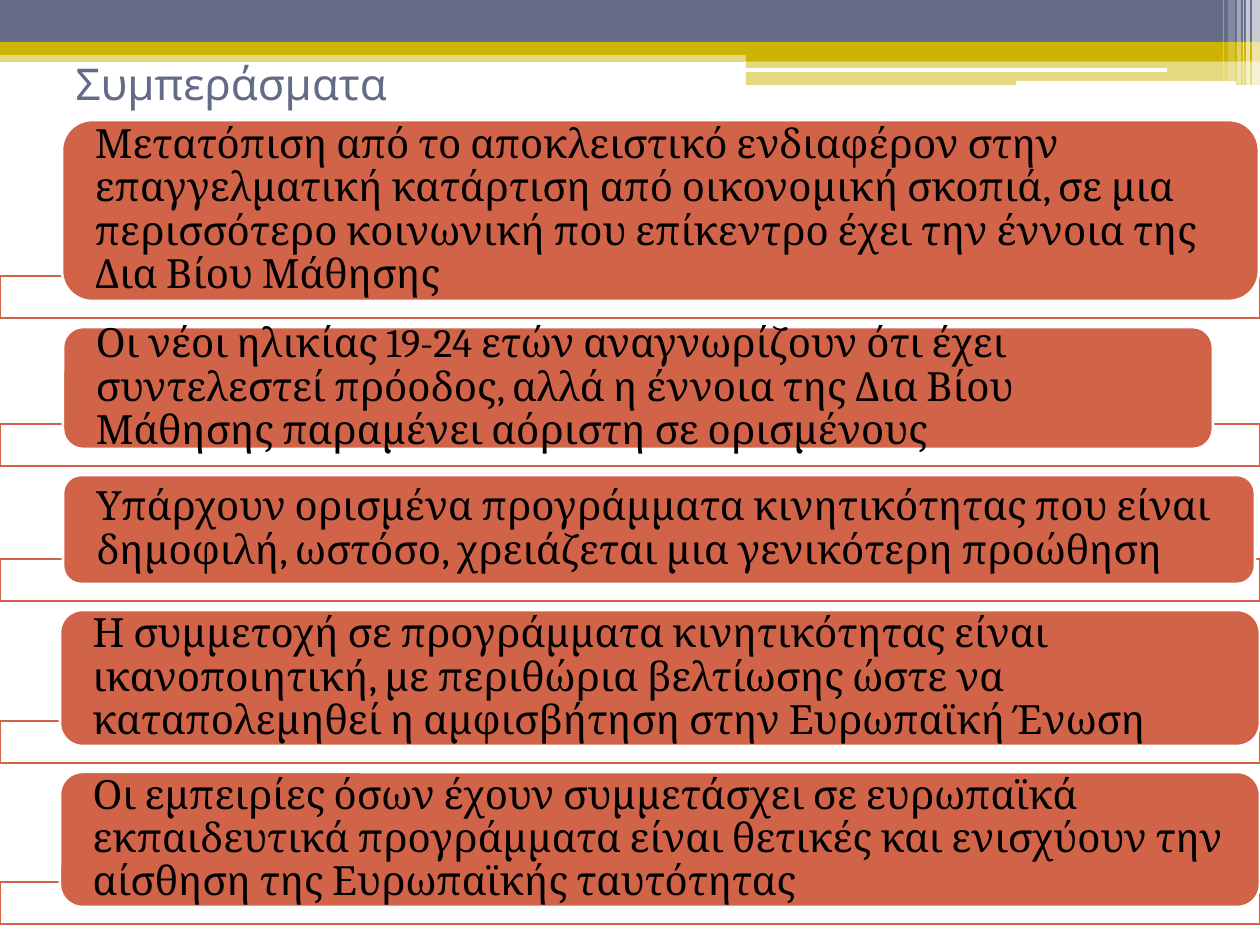
from pptx import Presentation
from pptx.dml.color import RGBColor
from pptx.enum.shapes import MSO_SHAPE
from pptx.enum.text import MSO_ANCHOR, PP_ALIGN
from pptx.oxml.ns import qn
from pptx.util import Pt
from lxml import etree

PX = 914400 // 126
WIDTH, HEIGHT = 1260, 945
RECT = MSO_SHAPE.RECTANGLE
ROUND = MSO_SHAPE.ROUNDED_RECTANGLE
MIDDLE = MSO_ANCHOR.MIDDLE
LEFT = PP_ALIGN.LEFT

SLATE = RGBColor(0x64, 0x6B, 0x86)
GOLD = RGBColor(0xCC, 0xB4, 0x00)
CORAL = RGBColor(0xD1, 0x63, 0x49)
WHITE = RGBColor(0xFF, 0xFF, 0xFF)
BLACK = RGBColor(0x00, 0x00, 0x00)


def add_block(kind, left, top, width, height, color, opacity=100, outline=None):
    block = page.shapes.add_shape(kind, left * PX, top * PX, width * PX, height * PX)
    block.shadow.inherit = False
    block.fill.solid()
    block.fill.fore_color.rgb = color
    if opacity < 100:
        fill_color = block.fill._xPr.find(qn("a:solidFill"))[0]
        etree.SubElement(fill_color, qn("a:alpha"), val=str(opacity * 1000))
    if outline is None:
        block.line.fill.background()
    else:
        block.line.color.rgb = outline
        block.line.width = Pt(1.5)
    return block


def format_text(frame, size, font, color):
    frame.word_wrap = True
    frame.vertical_anchor = MIDDLE
    para = frame.paragraphs[0]
    para.alignment = LEFT
    span = para.runs[0]
    span.font.size = Pt(size)
    span.font.name = font
    span.font.color.rgb = color


deck = Presentation()
deck.slide_width = WIDTH * PX
deck.slide_height = HEIGHT * PX
page = deck.slides.add_slide(deck.slide_layouts[5])

header_blocks = [
    (RECT, 0, 50, 1260, 12, GOLD, 50),
    (RECT, 0, 0, 1260, 43, SLATE, 100),
    (RECT, 0, 42, 1260, 13, GOLD, 100),
    (RECT, 746, 49, 514, 12, GOLD, 100),
    (RECT, 746, 60, 514, 25, GOLD, 50),
    (ROUND, 745, 68, 422, 4, WHITE, 100),
    (ROUND, 1016, 81, 220, 5, WHITE, 100),
    (RECT, 1252, 0, 8, 85, WHITE, 65),
    (RECT, 1246, 0, 4, 85, WHITE, 65),
    (RECT, 1243, 0, 1, 85, WHITE, 60),
    (RECT, 1237, 0, 4, 85, WHITE, 40),
    (RECT, 1228, 0, 7, 81, WHITE, 20),
    (RECT, 1223, 0, 1, 81, WHITE, 30),
]
for block_values in header_blocks:
    add_block(*block_values)

title = page.shapes.title
title.left, title.top = 63 * PX, 49 * PX
title.width, title.height = 1134 * PX, 69 * PX
title.text_frame.text = "Συμπεράσματα"
format_text(title.text_frame, 25, "Cabin", SLATE)

conclusions = [
    (62, 1197, 181, "Μετατόπιση από το αποκλειστικό ενδιαφέρον στην επαγγελματική κατάρτιση "
     "από οικονομική σκοπιά, σε μια περισσότερο κοινωνική που επίκεντρο έχει την έννοια "
     "της Δια Βίου Μάθησης"),
    (63, 1150, 122, "Οι νέοι ηλικίας 19-24 ετών αναγνωρίζουν ότι έχει συντελεστεί πρόοδος, "
     "αλλά η έννοια της Δια Βίου Μάθησης παραμένει αόριστη σε ορισμένους"),
    (63, 1192, 109, "Υπάρχουν ορισμένα προγράμματα κινητικότητας που είναι δημοφιλή, "
     "ωστόσο, χρειάζεται μια γενικότερη προώθηση"),
    (60, 1200, 136, "Η συμμετοχή σε προγράμματα κινητικότητας είναι ικανοποιητική, "
     "με περιθώρια βελτίωσης ώστε να καταπολεμηθεί η αμφισβήτηση στην Ευρωπαϊκή Ένωση"),
    (60, 1200, 135, "Οι εμπειρίες όσων έχουν συμμετάσχει σε ευρωπαϊκά εκπαιδευτικά "
     "προγράμματα είναι θετικές και ενισχύουν την αίσθηση της Ευρωπαϊκής ταυτότητας"),
]
GAP, BAR_HEIGHT, BAR_OVERLAP, TEXT_INDENT = 26, 42, 25, 33
top = 120
for left, width, height, wording in conclusions:
    bottom = top + height
    add_block(RECT, 0, bottom - BAR_OVERLAP, WIDTH, BAR_HEIGHT, WHITE, 90, CORAL)
    box = add_block(ROUND, left, top, width, height, CORAL, outline=WHITE)
    frame = box.text_frame
    frame.text = wording
    format_text(frame, 23, "Cambria", BLACK)
    corner_inset = round(height * 0.05)
    frame.margin_left = frame.margin_right = (TEXT_INDENT - corner_inset) * PX
    frame.margin_top = frame.margin_bottom = 0
    frame.paragraphs[0].line_spacing = 0.9
    top = bottom + GAP

deck.save("out.pptx")
